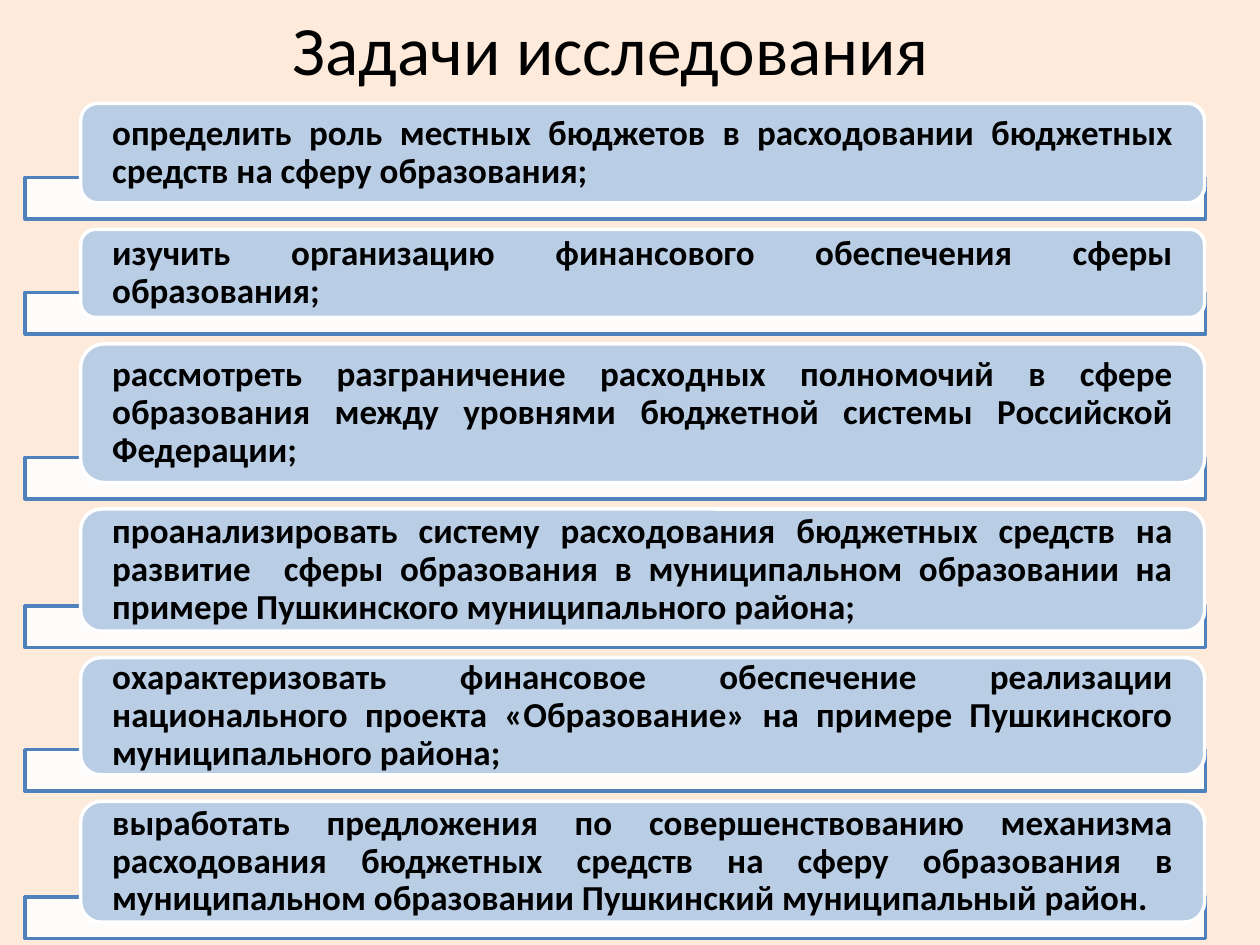
from dataclasses import dataclass

from lxml import etree
from pptx import Presentation
from pptx.dml.color import RGBColor
from pptx.enum import shapes, text
from pptx.oxml.ns import qn
from pptx.util import Inches, Pt


@dataclass(frozen=True)
class Theme:
    font: str = "Calibri"
    title_size: float = 39.6
    body_size: float = 20
    line_width: float = 2
    background: str = "FDEADA"
    card: str = "B9CDE5"
    bar_line: str = "4F81BD"
    white: str = "FFFFFF"
    ink: str = "000000"


@dataclass(frozen=True)
class Task:
    wording: str
    height: float


THEME = Theme()
TASKS = [
    Task("определить роль местных бюджетов в расходовании бюджетных средств "
         "на сферу образования;", 0.79),
    Task("изучить организацию финансового обеспечения сферы образования;", 0.7),
    Task("рассмотреть разграничение расходных полномочий в сфере образования "
         "между уровнями бюджетной системы Российской Федерации;", 1.1),
    Task("проанализировать систему расходования бюджетных средств на развитие  "
         "сферы образования в муниципальном образовании на примере Пушкинского "
         "муниципального района;", 0.97),
    Task("охарактеризовать финансовое обеспечение реализации национального "
         "проекта «Образование» на примере Пушкинского муниципального района;", 0.93),
    Task("выработать предложения по совершенствованию механизма расходования "
         "бюджетных средств на сферу образования в муниципальном образовании "
         "Пушкинский муниципальный район.", 0.96),
]

FIRST_TOP, GAP = 0.82, 0.21
CARD_LEFT, CARD_WIDTH = 0.64, 8.92
BAR_LEFT, BAR_WIDTH, BAR_HEIGHT, BAR_OVERLAP = 0.2, 9.37, 0.33, 0.2
TEXT_INSET = 0.25
CORNER = 0.17
CORNER_INSET = 0.29  # share of the corner radius that a rounded shape keeps free


def rgb(value: str) -> RGBColor:
    return RGBColor.from_string(value)


def add_box(s, kind, left: float, top: float, width: float, height: float,
            fill: str, line: str):
    sp = s.shapes.add_shape(kind, Inches(left), Inches(top),
                            Inches(width), Inches(height))
    sp.shadow.inherit = False
    sp.fill.solid()
    sp.fill.fore_color.rgb = rgb(fill)
    sp.line.color.rgb = rgb(line)
    sp.line.width = Pt(THEME.line_width)
    return sp


def set_opacity(sp, percent: int) -> None:
    color = sp._element.spPr.find(qn("a:solidFill")).find(qn("a:srgbClr"))
    etree.SubElement(color, qn("a:alpha")).set("val", str(percent * 1000))


def style_paragraph(p, size: float, align, bold: bool) -> None:
    p.alignment = align
    p.font.name = THEME.font
    p.font.size = Pt(size)
    p.font.bold = bold
    p.font.color.rgb = rgb(THEME.ink)


def add_title(s, wording: str) -> None:
    title = s.shapes.title
    title.left, title.top = Inches(0.35), Inches(0)
    title.width, title.height = Inches(9), Inches(0.76)
    tf = title.text_frame
    tf.text = wording
    tf.vertical_anchor = text.MSO_ANCHOR.MIDDLE
    style_paragraph(tf.paragraphs[0], THEME.title_size, text.PP_ALIGN.CENTER, False)


def add_task(s, task: Task, top: float) -> None:
    """Draw the pale bar and, over it, the rounded card with the wording."""
    bar = add_box(s, shapes.MSO_SHAPE.RECTANGLE, BAR_LEFT,
                  top + task.height - BAR_OVERLAP, BAR_WIDTH, BAR_HEIGHT,
                  THEME.white, THEME.bar_line)
    set_opacity(bar, 90)
    card = add_box(s, shapes.MSO_SHAPE.ROUNDED_RECTANGLE, CARD_LEFT, top,
                   CARD_WIDTH, task.height, THEME.card, THEME.white)
    card.adjustments[0] = CORNER
    tf = card.text_frame
    tf.word_wrap = True
    tf.vertical_anchor = text.MSO_ANCHOR.MIDDLE
    inset = TEXT_INSET - CORNER_INSET * CORNER * task.height
    tf.margin_left = tf.margin_right = Inches(inset)
    tf.margin_top = tf.margin_bottom = 0
    tf.text = task.wording
    p = tf.paragraphs[0]
    p.line_spacing = 0.9
    style_paragraph(p, THEME.body_size, text.PP_ALIGN.JUSTIFY, True)


def main() -> None:
    prs = Presentation()
    prs.slide_width, prs.slide_height = Inches(10), Inches(7.5)
    s = prs.slides.add_slide(prs.slide_layouts.get_by_name("Title Only"))
    s.background.fill.solid()
    s.background.fill.fore_color.rgb = rgb(THEME.background)
    add_title(s, "Задачи исследования")
    top = FIRST_TOP
    for task in TASKS:
        add_task(s, task, top)
        top += task.height + GAP
    prs.save("out.pptx")


if __name__ == "__main__":
    main()
